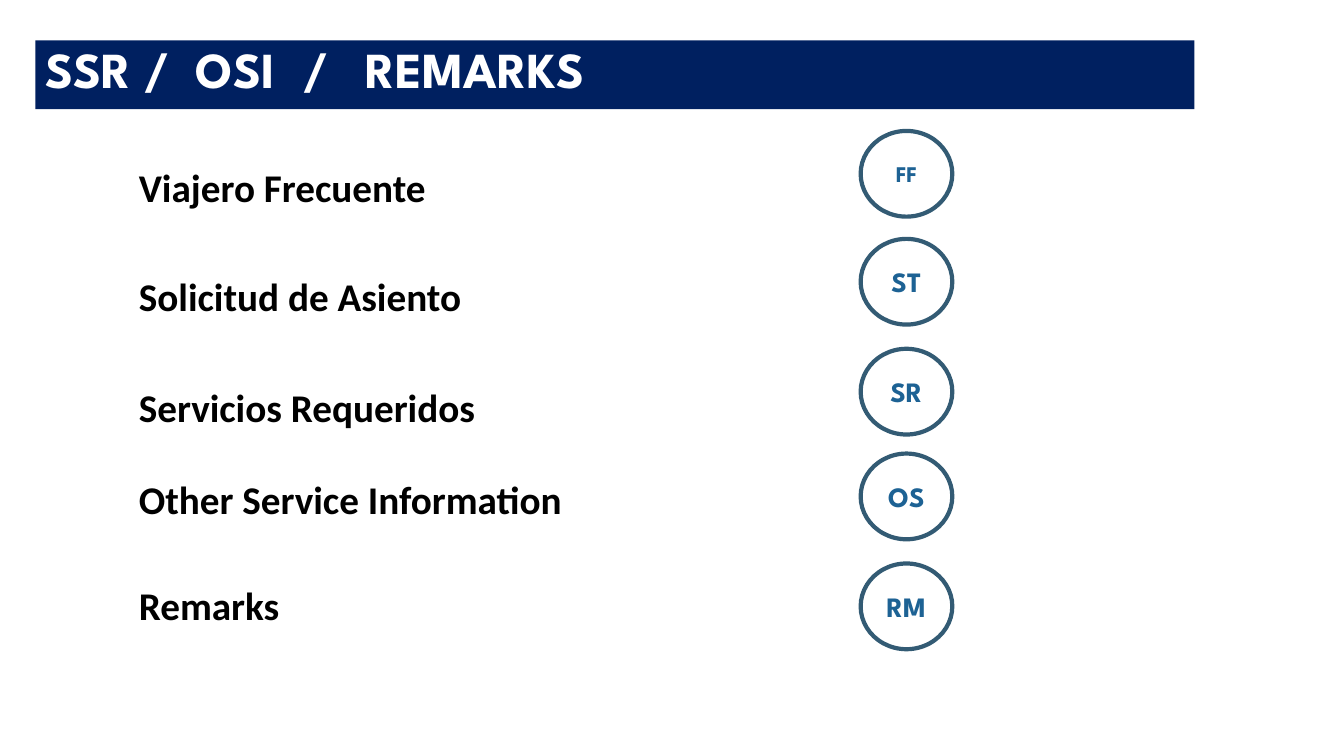
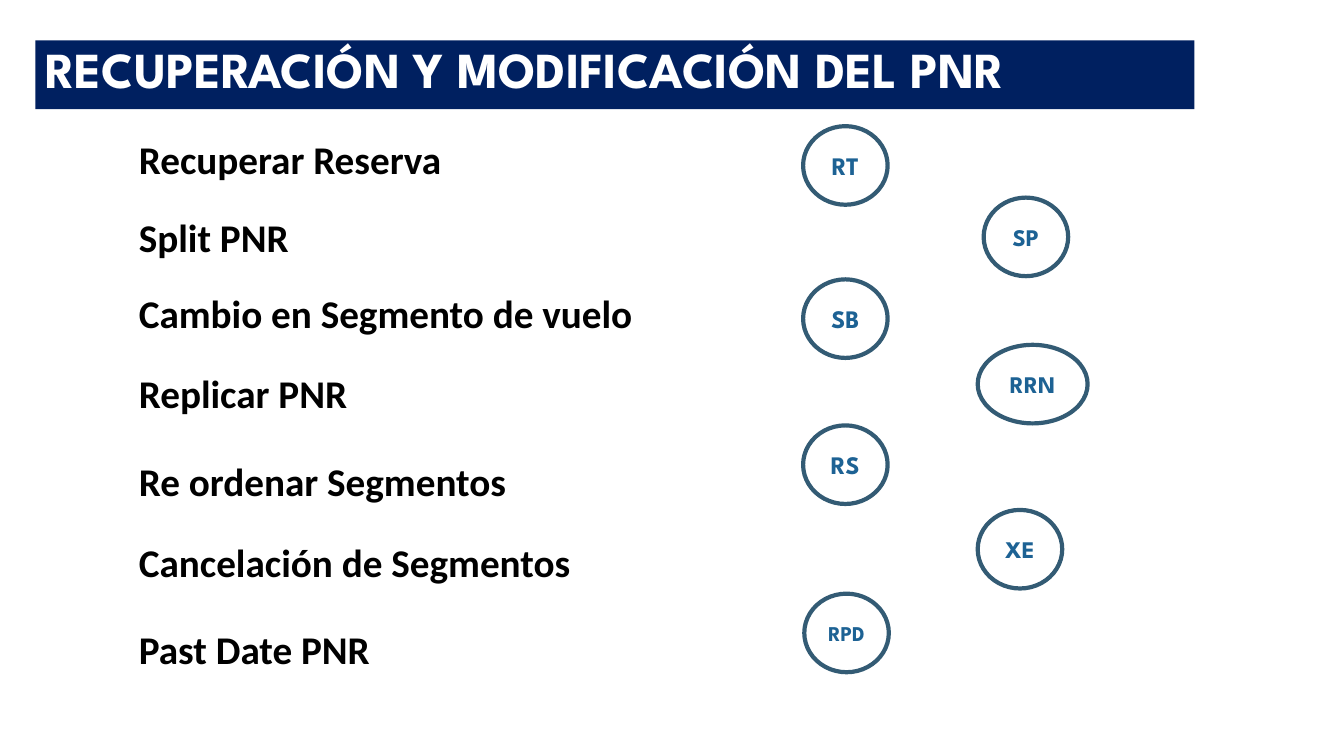
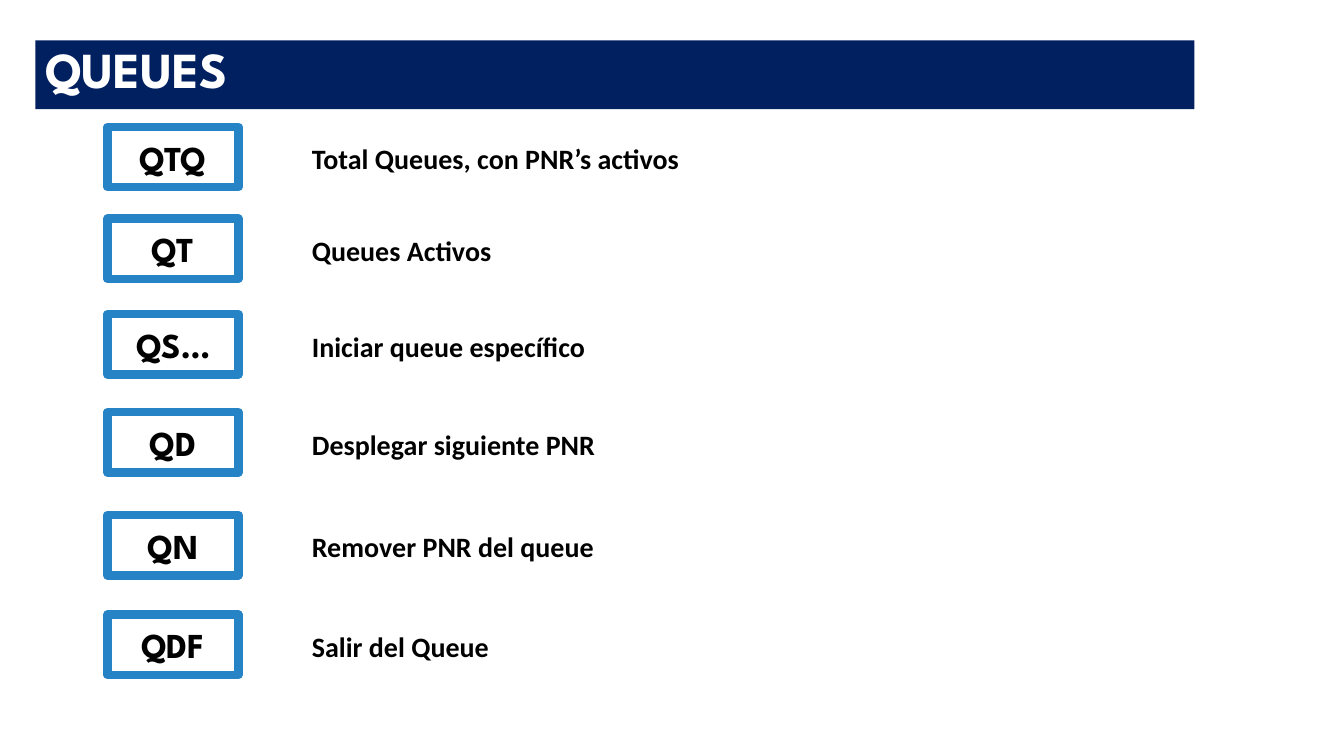
from pptx import Presentation
from pptx.dml.color import RGBColor
from pptx.enum.shapes import MSO_SHAPE as Form
from pptx.enum.text import MSO_ANCHOR as Anchor, MSO_AUTO_SIZE as Fit, PP_ALIGN as Align
from pptx.util import Cm, Pt
from lxml.etree import SubElement
from pptx.oxml.ns import qn

# Shared look
NAVY, STEEL, BLUE, SKY = "002060", "335B74", "1D6294", "2683C6"
WHITE, BLACK = "FFFFFF", "000000"
HEAD, BODY = "League Spartan", "Calibri"

deck = Presentation()
deck.slide_width, deck.slide_height = Cm(33.87), Cm(19.05)
blank = deck.slide_layouts[6]


def put(slide, box, words, size, face=BODY, tint=BLACK, form=None, fill=WHITE, edge=None, width=0):
    """Add a plain text box, or a filled shape with centred text when a form is given."""
    place = [Cm(n) for n in box]
    if form is None:
        item = slide.shapes.add_textbox(*place)
    else:
        item = slide.shapes.add_shape(form, *place)
        item.shadow.inherit = False
        item.fill.solid()
        item.fill.fore_color.rgb = RGBColor.from_string(fill)
        if edge:
            item.line.color.rgb = RGBColor.from_string(edge)
            item.line.width = Pt(width)
        else:
            item.line.fill.background()
    frame = item.text_frame
    frame.word_wrap = True
    frame.text = words
    para = frame.paragraphs[0]
    if form is None:
        frame.auto_size = Fit.SHAPE_TO_FIT_TEXT
    else:
        frame.vertical_anchor = Anchor.MIDDLE
        para.alignment = Align.CENTER
    font = para.runs[0].font
    font.name, font.size, font.bold = face, Pt(size), True
    font.color.rgb = RGBColor.from_string(tint)
    return frame


def start(title):
    """Add a slide with the title band; return the slide and its title paragraph."""
    slide = deck.slides.add_slide(blank)
    frame = put(slide, (0.89, 1.02, 29.21, 1.73), title, 36, HEAD, WHITE, Form.RECTANGLE, NAVY)
    frame.vertical_anchor = Anchor.TOP
    para = frame.paragraphs[0]
    para.alignment = Align.LEFT
    para.line_spacing = 0.9
    return slide, para


# Slide 1: remarks, with tab stops in the title
slide, para = start("SSR /\tOSI\t/\tREMARKS")
tabs = SubElement(para._p.get_or_add_pPr(), qn("a:tabLst"))
for stop in (3.8, 6.5, 8.08):
    SubElement(tabs, qn("a:tab"), pos=str(Cm(stop)), algn="l")

# label, its top, code, circle top, code size
rows = [
    ("Viajero Frecuente", 3.99, "FF", 3.3, 16),
    ("Solicitud de Asiento", 6.73, "ST", 6.02, 20),
    ("Servicios Requeridos", 9.53, "SR", 8.79, 20),
    ("Other Service Information", 11.86, "OS", 11.43, 20),
    ("Remarks", 14.53, "RM", 14.2, 20),
]
for label, top, code, high, size in rows:
    put(slide, (3.25, top, 13.77, 1.45), label, 28)
    put(slide, (21.69, high, 2.31, 2.16), code, size, HEAD, BLUE, Form.OVAL, WHITE, STEEL, 3)

# Slide 2: retrieving and changing the PNR
slide, para = start("RECUPERACIÓN Y MODIFICACIÓN DEL PNR")

# label, its top, code, circle left, top and width, code size
rows = [
    ("Recuperar Reserva", 3.28, "RT", 20.24, 3.18, 2.13, 18),
    ("Split PNR", 5.26, "SP", 24.79, 4.98, 2.13, 17),
    ("Cambio en Segmento de vuelo", 7.16, "SB", 20.24, 7.04, 2.13, 18),
    ("Replicar PNR", 9.19, "RRN", 24.64, 8.69, 2.77, 17),
    ("Re ordenar Segmentos", 11.4, "RS", 20.24, 10.72, 2.13, 18),
    ("Cancelación de Segmentos", 13.44, "XE", 24.64, 12.85, 2.13, 17),
    ("Past Date PNR", 15.62, "RPD", 20.27, 14.96, 2.13, 15),
]
for label, top, code, left, high, wide, size in rows:
    put(slide, (3.25, top, 13.77, 1.45), label, 28)
    put(slide, (left, high, wide, 1.98), code, size, HEAD, BLUE, Form.OVAL, WHITE, STEEL, 3)

# Slide 3: queue commands
slide, para = start("QUEUES")
rows = [
    ("QTQ", "Total Queues, con PNR’s activos", 3.2),
    ("QT", "Queues Activos", 5.51),
    ("QS…", "Iniciar queue específico", 7.92),
    ("QD", "Desplegar siguiente PNR", 10.39),
    ("QN", "Remover PNR del queue", 12.98),
    ("QDF", "Salir del Queue", 15.49),
]
for code, label, top in rows:
    put(slide, (2.71, top, 3.3, 1.52), code, 25, HEAD, BLACK, Form.RECTANGLE, WHITE, SKY, 6)
    put(slide, (7.61, top + 0.25, 12.9, 1.12), label, 20)

deck.save("out.pptx")
